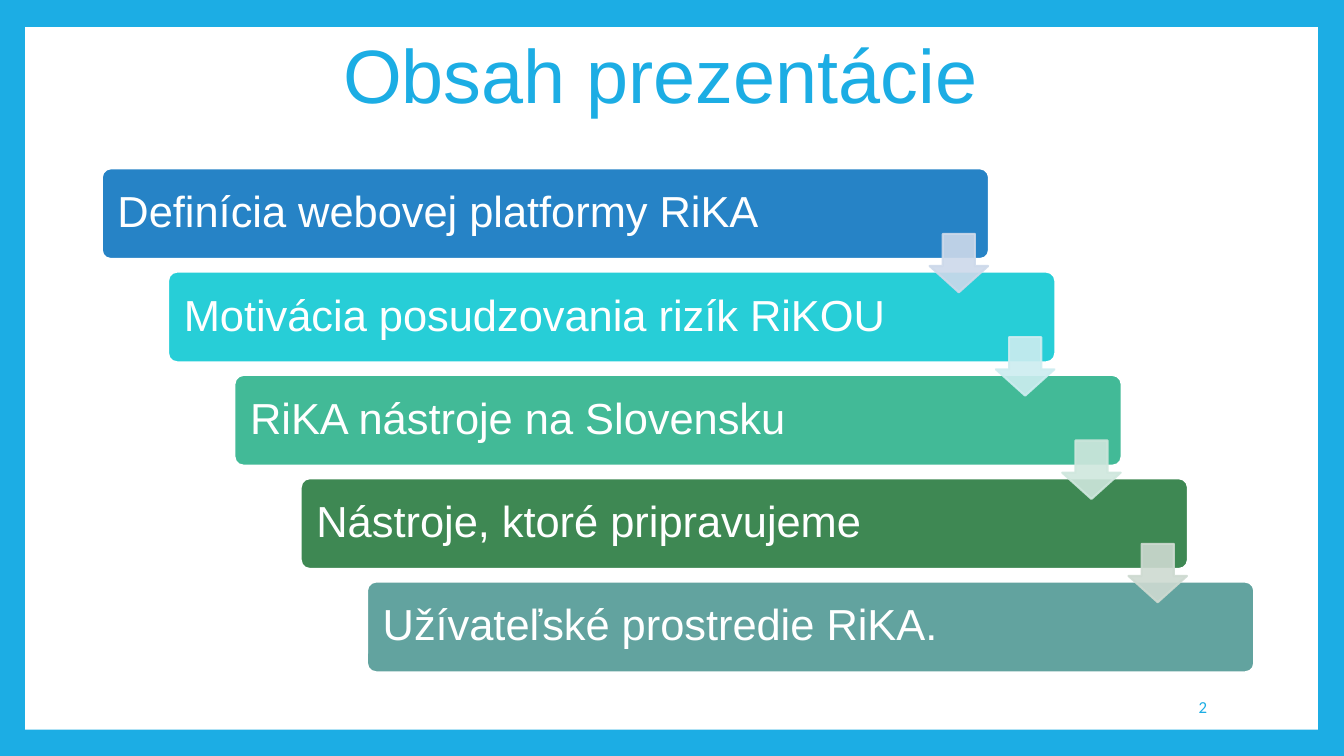
from lxml import etree
from pptx import Presentation
from pptx.dml.color import RGBColor
from pptx.enum import shapes, text
from pptx.oxml.ns import qn
from pptx.util import Inches, Pt

# Content
TITLE = "Obsah prezentácie"
PAGE = "2"
STEPS = [  # text, bar colour, colour of the arrow to the next bar
    ("Definícia webovej platformy RiKA", "blue", "pale blue"),
    ("Motivácia posudzovania rizík RiKOU", "cyan", "pale cyan"),
    ("RiKA nástroje na Slovensku", "mint", "pale mint"),
    ("Nástroje, ktoré pripravujeme", "green", "pale green"),
    ("Užívateľské prostredie RiKA.", "teal", None),
]
COLORS = {
    "sky": "1CADE4", "white": "FFFFFF",
    "blue": "2683C6", "cyan": "27CED7", "mint": "42BA97",
    "green": "3E8853", "teal": "62A39F",
    "pale blue": "CDD9EA", "pale cyan": "CDEDF0",
    "pale mint": "CFE7DD", "pale green": "CEDAD1",
}

# Layout in inches
BAR_X, BAR_Y, BAR_W, BAR_H = 1.01, 1.67, 8.8, 0.9
STEP_X, STEP_Y = 0.6575, 1.025
ARROW_X, ARROW_Y, ARROW = 9.22, 2.32, 0.58

prs = Presentation()
prs.slide_width, prs.slide_height = Inches(13.33), Inches(7.5)
slide = prs.slides.add_slide(prs.slide_layouts[6])


def rgb(name):
    return RGBColor.from_string(COLORS[name])


def write(shape, words, size, color="white", font="Arial", align="LEFT",
          inset=(0.1, 0.05), line=None, after=None):
    frame = shape.text_frame
    frame.word_wrap = True
    frame.vertical_anchor = text.MSO_ANCHOR.MIDDLE
    frame.margin_left = frame.margin_right = Inches(inset[0])
    frame.margin_top = frame.margin_bottom = Inches(inset[1])
    para = frame.paragraphs[0]
    para.alignment = getattr(text.PP_ALIGN, align)
    para.line_spacing = line
    para.space_after = after
    run = para.add_run()
    run.text = words
    run.font.size, run.font.name = Pt(size), font
    run.font.color.rgb = rgb(color)


def draw(kind, box, fill, line=None, adjust=(), alpha=None):
    shape = slide.shapes.add_shape(kind, *map(Inches, box))
    shape.shadow.inherit = False
    for i, value in enumerate(adjust):
        shape.adjustments[i] = value
    shape.fill.solid()
    shape.fill.fore_color.rgb = rgb(fill)
    if line:
        shape.line.color.rgb = rgb(line)
        shape.line.width = Pt(1.5)
    else:
        shape.line.fill.background()
    if alpha:
        for node in shape.element.spPr.iter(qn("a:srgbClr")):
            etree.SubElement(node, qn("a:alpha")).set("val", str(alpha * 1000))
    return shape


# Frame
slide.background.fill.solid()
slide.background.fill.fore_color.rgb = rgb("sky")
draw(shapes.MSO_SHAPE.RECTANGLE, (0.25, 0.27, 12.82, 6.97), "white")

# Title and page number
head = slide.shapes.add_textbox(*map(Inches, (1.15, 0.04, 10.8, 1.48)))
write(head, TITLE, 54, "sky", align="CENTER", line=0.9)
foot = slide.shapes.add_textbox(*map(Inches, (10.2, 6.81, 1.87, 0.4)))
write(foot, PAGE, 12, "sky", "Calibri", "RIGHT", after=Pt(6))

# Staircase of bars
for i, (words, fill, _) in enumerate(STEPS):
    box = (BAR_X + i * STEP_X, BAR_Y + i * STEP_Y, BAR_W, BAR_H)
    bar = draw(shapes.MSO_SHAPE.ROUNDED_RECTANGLE, box, fill, "white", [0.1])
    write(bar, words, 31, inset=(0.13, 0.13), line=0.9)

# Arrows between the bars
for i, (_, _, tint) in enumerate(STEPS[:-1]):
    box = (ARROW_X + i * STEP_X, ARROW_Y + i * STEP_Y, ARROW, ARROW)
    draw(shapes.MSO_SHAPE.DOWN_ARROW, box, tint, tint, [0.55, 0.45], 90)

# The down arrow's first adjustment is its head, the second its shaft
for shape in slide.shapes:
    if shape.shape_type == shapes.MSO_SHAPE_TYPE.AUTO_SHAPE \
            and shape.auto_shape_type == shapes.MSO_SHAPE.DOWN_ARROW:
        shape.adjustments[0], shape.adjustments[1] = 0.55, 0.45

prs.save("out.pptx")
